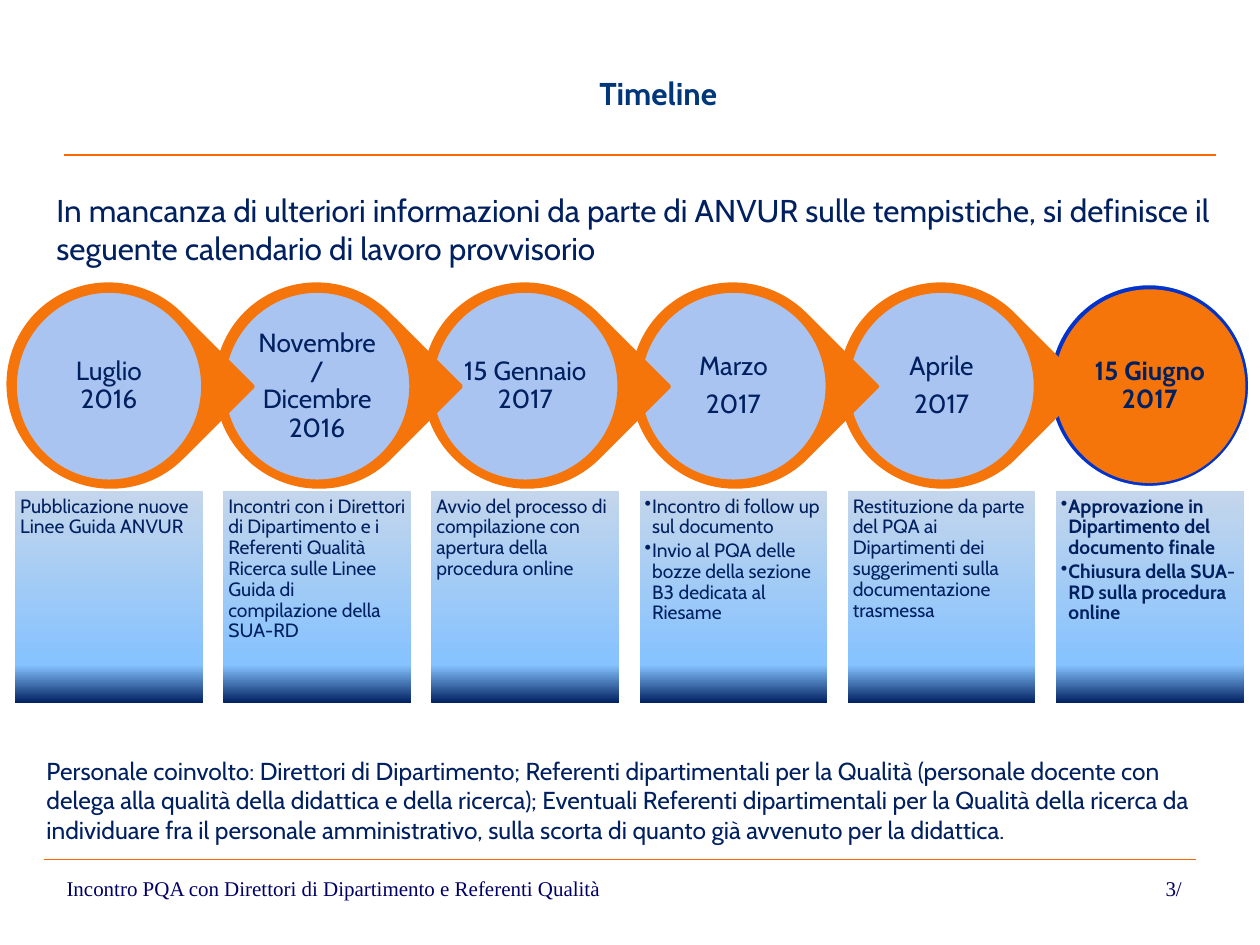
"""Build the "Timeline" slide: six milestones with a description panel under each."""
from copy import deepcopy
from dataclasses import dataclass

from lxml import etree
from pptx import Presentation
from pptx.dml.color import RGBColor
from pptx.enum import shapes, text
from pptx.oxml.ns import qn
from pptx.util import Inches, Pt

NAVY, ORANGE, BLUE = "002060", "F5750B", "A9C4F1"
GRADIENT = ((0, NAVY), (0.18, "85C2FF"), (1, "C4D6EB"))
LEFT, PITCH = 0.12, 1.652
DISC_W, DISC_H, DISC_TOP = 1.49, 1.51, 2.31
PANEL_TOP, PANEL_H = 3.9, 1.68


@dataclass
class Milestone:
    date: str
    notes: list[str]
    final: bool = False


@dataclass
class Caption:
    words: str
    box: tuple[float, float, float, float]
    size: float
    font: str = "Cabin"
    color: str = NAVY
    bold: bool = False
    align: text.PP_ALIGN = text.PP_ALIGN.LEFT
    anchor: text.MSO_ANCHOR = text.MSO_ANCHOR.TOP


MILESTONES = [
    Milestone("Luglio 2016", ["Pubblicazione nuove Linee Guida ANVUR"]),
    Milestone("Novembre/ Dicembre 2016", [
        "Incontri con i Direttori di Dipartimento e i Referenti Qualità Ricerca "
        "sulle Linee Guida di compilazione della SUA-RD"]),
    Milestone("15 Gennaio 2017", [
        "Avvio del processo di compilazione con apertura della procedura online"]),
    Milestone("Marzo\n2017", [
        "Incontro di follow up sul documento",
        "Invio al PQA delle bozze della sezione B3 dedicata al Riesame"]),
    Milestone("Aprile\n2017", [
        "Restituzione da parte del PQA ai Dipartimenti dei suggerimenti "
        "sulla documentazione trasmessa"]),
    Milestone("15 Giugno 2017", [
        "Approvazione in Dipartimento del documento finale",
        "Chiusura della SUA-RD sulla procedura online"], final=True),
]

CAPTIONS = [
    Caption("Incontro PQA con Direttori di Dipartimento e Referenti Qualità",
            (0.43, 6.9, 7.5, 0.36), 12, "Times New Roman", "000066"),
    Caption("3/", (8.94, 6.9, 0.75, 0.3), 12, "Times New Roman", "000066",
            align=text.PP_ALIGN.CENTER),
    Caption("Timeline", (1.06, 0.32, 8.33, 0.62), 18, color="00377B", bold=True,
            align=text.PP_ALIGN.CENTER, anchor=text.MSO_ANCHOR.BOTTOM),
    Caption("In mancanza di ulteriori informazioni da parte di ANVUR sulle tempistiche, "
            "si definisce il seguente calendario di lavoro provvisorio",
            (0.35, 1.47, 9.37, 0.71), 18),
    Caption("Personale coinvolto: Direttori di Dipartimento; Referenti dipartimentali per la "
            "Qualità (personale docente con delega alla qualità della didattica e della ricerca); "
            "Eventuali Referenti dipartimentali per la Qualità della ricerca da individuare fra "
            "il personale amministrativo, sulla scorta di quanto già avvenuto per la didattica.",
            (0.27, 5.95, 9.45, 0.81), 14),
]


def rgb(color: str) -> RGBColor:
    return RGBColor.from_string(color)


def style(p, size: float, font: str, color: str, bold: bool, align) -> None:
    p.alignment = align
    for r in p.runs:
        r.font.size, r.font.name, r.font.bold = Pt(size), font, bold
        r.font.color.rgb = rgb(color)


def add_shape(s, kind, x: float, y: float, w: float, h: float):
    sp = s.shapes.add_shape(kind, Inches(x), Inches(y), Inches(w), Inches(h))
    sp.shadow.inherit = False
    return sp


def paint(sp, fill: str, line: str) -> None:
    sp.fill.solid()
    sp.fill.fore_color.rgb = rgb(fill)
    sp.line.color.rgb = rgb(line)
    sp.line.width = Pt(2)


def paint_gradient(sp) -> None:
    sp.fill.gradient()
    sp.fill.gradient_angle = 90
    stops = sp._element.spPr.find(".//" + qn("a:gsLst"))
    stops.append(deepcopy(stops[0]))
    for stop, (position, color) in zip(sp.fill.gradient_stops, GRADIENT):
        stop.position = position
        stop.color.rgb = rgb(color)
    sp.line.fill.background()


def write(sp, lines: list[str], size: float, bold: bool, align, anchor,
          inset: float, after: float, bullets: bool = False) -> None:
    tf = sp.text_frame
    tf.word_wrap, tf.vertical_anchor = True, anchor
    tf.margin_left = tf.margin_right = tf.margin_top = tf.margin_bottom = Inches(inset)
    tf.text = "\n".join(lines)
    for p in tf.paragraphs:
        if bullets:
            pPr = p._p.get_or_add_pPr()
            pPr.set("marL", str(Inches(0.06)))
            pPr.set("indent", str(Inches(-0.06)))
            etree.SubElement(pPr, qn("a:buChar")).set("char", "•")
        p.line_spacing, p.space_after = 0.9, Pt(after)
        style(p, size, "Cabin", NAVY, bold, align)


def add_milestone(s, m: Milestone, x: float) -> None:
    if m.final:
        ring = add_shape(s, shapes.MSO_SHAPE.OVAL, x - 0.06, 2.25, 1.6, 1.62)
        paint(ring, "0033CC", "FFFFFF")
    else:
        ring = add_shape(s, shapes.MSO_SHAPE.TEAR, x - 0.06, 2.26, 1.62, 1.6)
        ring.rotation = 45
        paint(ring, ORANGE, ORANGE)
    disc = add_shape(s, shapes.MSO_SHAPE.OVAL, x, DISC_TOP, DISC_W, DISC_H)
    paint(disc, ORANGE if m.final else BLUE, ORANGE)
    write(disc, [m.date], 15, m.final, text.PP_ALIGN.CENTER,
          text.MSO_ANCHOR.MIDDLE, 0.02, 5.25)
    panel = add_shape(s, shapes.MSO_SHAPE.RECTANGLE, x, PANEL_TOP, DISC_W, PANEL_H)
    paint_gradient(panel)
    write(panel, m.notes, 11, m.final, text.PP_ALIGN.LEFT,
          text.MSO_ANCHOR.TOP, 0.04, 1.65, len(m.notes) > 1)


def add_caption(s, c: Caption) -> None:
    tf = s.shapes.add_textbox(*map(Inches, c.box)).text_frame
    tf.word_wrap, tf.vertical_anchor = True, c.anchor
    tf.text = c.words
    style(tf.paragraphs[0], c.size, c.font, c.color, c.bold, c.align)


def add_rule(s, x: float, y: float) -> None:
    line = s.shapes.add_connector(shapes.MSO_CONNECTOR.STRAIGHT, Inches(x), Inches(y),
                                  Inches(x + 9.14), Inches(y))
    line.line.color.rgb = rgb("FF6600")
    line.line.width = Pt(0.75)
    etree.SubElement(line._element.spPr, qn("a:effectLst"))


def main() -> None:
    prs = Presentation()
    prs.slide_width, prs.slide_height = Inches(10), Inches(7.5)
    s = prs.slides.add_slide(prs.slide_layouts[6])
    add_rule(s, 0.51, 1.23)
    add_rule(s, 0.35, 6.82)
    for i, m in reversed(list(enumerate(MILESTONES))):
        add_milestone(s, m, LEFT + i * PITCH)
    for c in CAPTIONS:
        add_caption(s, c)
    prs.save("out.pptx")


if __name__ == "__main__":
    main()
